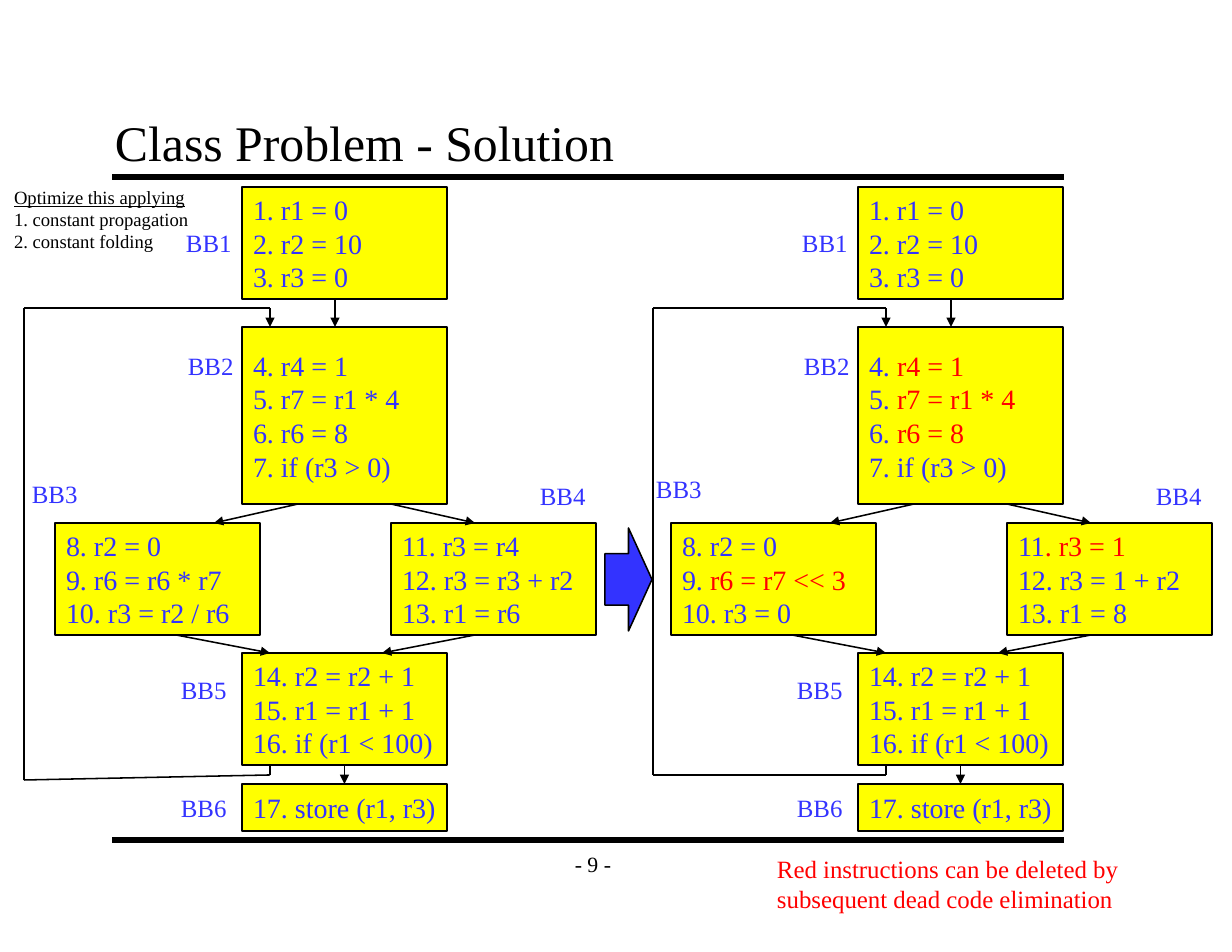
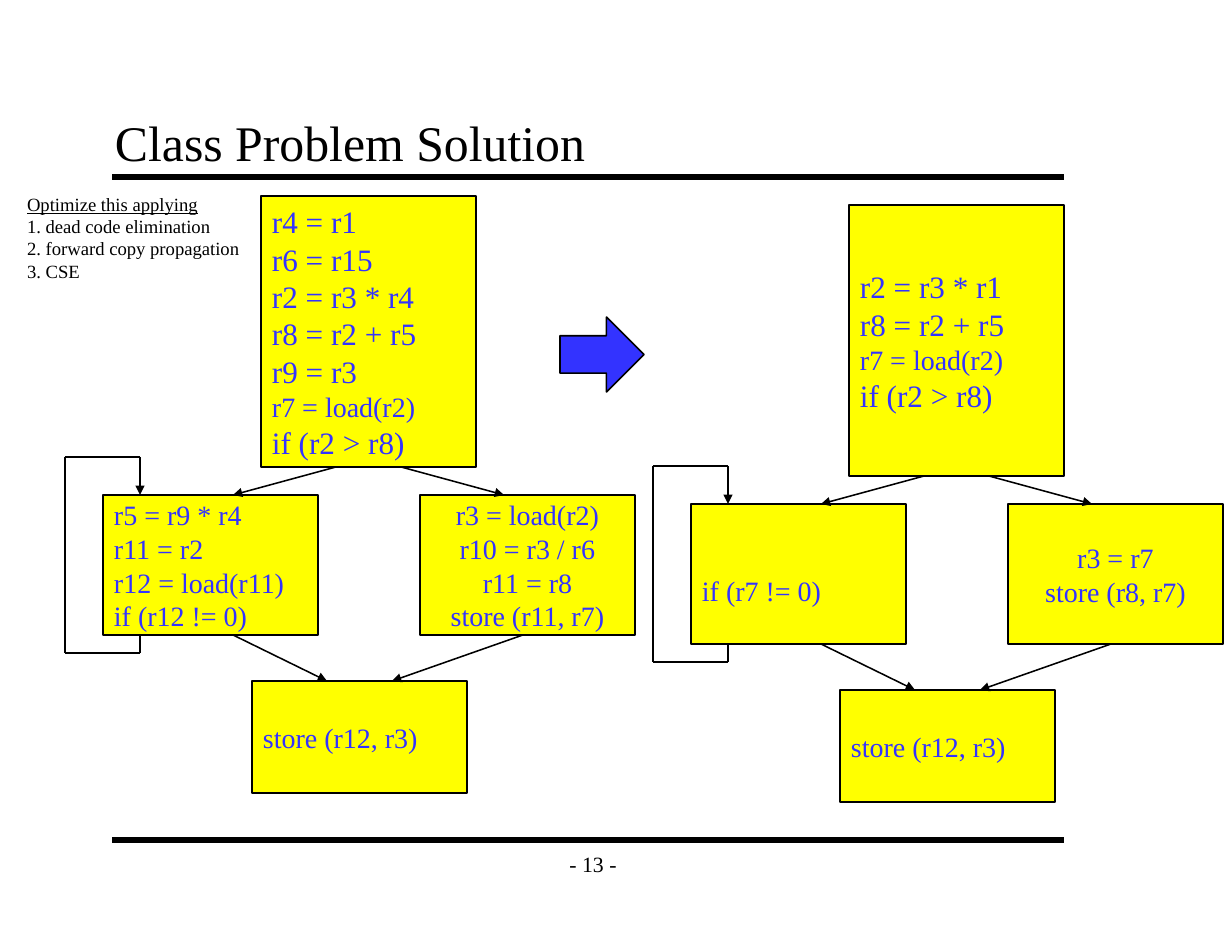
from lxml.etree import SubElement
from pptx import Presentation
from pptx.dml.color import RGBColor
from pptx.enum.shapes import MSO_CONNECTOR, MSO_SHAPE
from pptx.enum.text import MSO_ANCHOR, PP_ALIGN
from pptx.oxml.ns import qn
from pptx.util import Emu, Pt

BLACK = RGBColor(0x00, 0x00, 0x00)
YELLOW = RGBColor(0xFF, 0xFF, 0x00)
BLUE = RGBColor(0x33, 0x33, 0xFF)
RED = RGBColor(0xFF, 0x00, 0x00)
FONT = "Times New Roman"
PX_PER_INCH = 112
BOTTOM, TOP = 2, 0


def px(length):
    return Emu(round(length * 914400 / PX_PER_INCH))


def add_span(para, text, size, color, underline=None):
    span = para.add_run()
    span.text = text
    span.font.name = FONT
    span.font.size = Pt(size)
    span.font.color.rgb = color
    span.font.underline = underline


def write(box, lines, size, color, align=PP_ALIGN.LEFT, small=()):
    """Write one paragraph a line; what follows a | is red, lines in small are 18 pt."""
    frame = box.text_frame
    frame.word_wrap = False
    for index, line in enumerate(lines):
        para = frame.paragraphs[0] if index == 0 else frame.add_paragraph()
        para.alignment = align
        line_size = 18 if line in small else size
        plain, _, red = line.partition("|")
        add_span(para, plain, line_size, color)
        if red:
            add_span(para, red, line_size, RED)


def add_text(page, left, top, width, height, lines, size, color, **style):
    box = page.shapes.add_textbox(px(left), px(top), px(width), px(height))
    write(box, lines, size, color, **style)
    return box


def add_solid(page, kind, left, top, width, height, color):
    shape = page.shapes.add_shape(kind, px(left), px(top), px(width), px(height))
    shape.shadow.inherit = False
    shape.fill.solid()
    shape.fill.fore_color.rgb = color
    shape.line.color.rgb = BLACK
    shape.line.width = Pt(1)
    return shape


def add_code(page, left, top, width, height, lines, size=18, **style):
    box = add_solid(page, MSO_SHAPE.RECTANGLE, left, top, width, height, YELLOW)
    box.text_frame.vertical_anchor = MSO_ANCHOR.MIDDLE
    write(box, lines, size, BLUE, **style)
    return box


def add_line(page, start, end, arrow=False, width=1):
    line = page.shapes.add_connector(
        MSO_CONNECTOR.STRAIGHT, *(px(value) for value in (*start, *end)))
    line.line.color.rgb = BLACK
    line.line.width = Pt(width)
    if arrow:
        SubElement(line.line._get_or_add_ln(), qn("a:tailEnd"),
                   type="triangle", w="med", len="med")
    SubElement(line._element.spPr, qn("a:effectLst"))
    return line


def add_edges(page, left, top, edges):
    for x1, y1, x2, y2 in edges:
        add_line(page, (left + x1, top + y1), (left + x2, top + y2), arrow=True)


def add_loop(page, left, top, corners):
    """Join the corners by lines, with an arrowhead at the last."""
    points = [(left + x, top + y) for x, y in corners]
    for index, (start, end) in enumerate(zip(points, points[1:])):
        add_line(page, start, end, arrow=index == len(points) - 2)


def add_page(deck, title, number):
    page = deck.slides.add_slide(deck.slide_layouts[6])
    for y in (177, 840):
        add_line(page, (112, y), (1064, y), width=4)
    footer = add_text(page, 551, 840, 84, 47, [f"- {number} -"], 14, BLACK,
                      align=PP_ALIGN.CENTER)
    footer.text_frame.vertical_anchor = MSO_ANCHOR.MIDDLE
    heading = add_text(page, 103, 103, 952, 75, [title], 32, BLACK)
    frame = heading.text_frame
    frame.vertical_anchor = MSO_ANCHOR.BOTTOM
    frame.margin_left = frame.margin_right = px(12)
    frame.margin_top = frame.margin_bottom = px(7)
    return page


def add_task(page, left, top, width, steps):
    lines = ["Optimize this applying"]
    lines += [f"{number}. {step}" for number, step in enumerate(steps, 1)]
    box = add_text(page, left, top, width, 13 + 22 * len(lines), lines, 12, BLACK)
    box.text_frame.paragraphs[0].runs[0].font.underline = True


def add_block_graph(page, left, top, codes, bb3_label, loop_x, loop_bottom):
    """Draw the six numbered basic blocks, their edges and the back edge."""
    places = [(187, 0, 112), (187, 140, 177), (0, 336, 112),
              (336, 336, 112), (187, 466, 112), (187, 597, 47)]
    labels = [(120, 35), (122, 158), bb3_label, (474, 288), (115, 482), (115, 600)]
    blocks = []
    for number, ((x, y, height), (label_x, label_y), code) in enumerate(
            zip(places, labels, codes), 1):
        blocks.append(add_code(page, left + x, top + y, 205, height, code))
        add_text(page, left + label_x, top + label_y, 68, 41, [f"BB{number}"], 16, BLUE)
    add_edges(page, left, top, [
        (280, 112, 280, 140), (243, 317, 159, 336), (336, 317, 420, 336),
        (121, 448, 215, 466), (420, 448, 327, 466)])
    last_edge = add_line(page, (left + 289, top + 578), (left + 289, top + 597), arrow=True)
    last_edge.begin_connect(blocks[4], BOTTOM)
    last_edge.end_connect(blocks[5], TOP)
    add_loop(page, left, top, [(215, 578), (215, 588), (loop_x, loop_bottom),
                               (loop_x, 121), (215, 121), (215, 140)])


def add_diamond_graph(page, left, top, entry, looping, side, final):
    """Draw an entry block, a looping and a side branch, and the final block."""
    add_code(page, left + 158, top, 215, 271, entry, size=20, small=("r7 = load(r2)",))
    loop_box = add_code(page, left, top + 299, 215, 140, looping)
    add_code(page, left + 317, top + 299, 215, 140, side, align=PP_ALIGN.CENTER)
    add_code(page, left + 149, top + 485, 215, 112, final)
    add_edges(page, left, top, [
        (233, 271, 130, 299), (298, 271, 401, 299),
        (130, 439, 224, 485), (420, 439, 289, 485)])
    add_loop(page, left, top, [(37, 439), (37, 457), (-38, 457),
                               (-38, 261), (37, 261), (37, 299)])
    return loop_box


def add_folding_page(deck):
    page = add_page(deck, "Class Problem - Solution", 9)
    entry = ["1. r1 = 0", "2. r2 = 10", "3. r3 = 0"]
    latch = ["14. r2 = r2 + 1", "15. r1 = r1 + 1", "16. if (r1 < 100)"]
    final = ["17. store (r1, r3)"]
    before = [entry,
              ["4. r4 = 1", "5. r7 = r1 * 4", "6. r6 = 8", "7. if (r3 > 0)"],
              ["8. r2 = 0", "9. r6 = r6 * r7", "10. r3 = r2 / r6"],
              ["11. r3 = r4", "12. r3 = r3 + r2", "13. r1 = r6"],
              latch, final]
    after = [entry,
             ["4. |r4 = 1", "5. |r7 = r1 * 4", "6. |r6 = 8", "7. if (r3 > 0)"],
             ["8. r2 = 0", "9. |r6 = r7 << 3", "10. r3 = 0"],
             ["11|. r3 = 1", "12. r3 = 1 + r2", "13. r1 = 8"],
             latch, final]
    add_task(page, 3, 180, 199, ["constant propagation", "constant folding"])
    add_block_graph(page, 55, 187, before, (-34, 286), -31, 593)
    add_block_graph(page, 671, 187, after, (-26, 281), -18, 588)
    add_solid(page, MSO_SHAPE.RIGHT_ARROW, 605, 528, 47, 103, BLUE)
    add_text(page, 766, 848, 368, 72, ["Red instructions can be deleted by",
                                       "subsequent dead code elimination"], 16, RED)


def add_copy_page(deck):
    page = add_page(deck, "Class Problem Solution", 13)
    final = ["store (r12, r3)"]
    add_task(page, 16, 187, 237,
             ["dead code elimination", "forward copy propagation", "CSE"])
    add_diamond_graph(
        page, 103, 196,
        ["r4 = r1", "r6 = r15", "r2 = r3 * r4", "r8 = r2 + r5", "r9 = r3",
         "r7 = load(r2)", "if (r2 > r8)"],
        ["r5 = r9 * r4", "r11 = r2", "r12 = load(r11)", "if (r12 != 0)"],
        ["r3 = load(r2)", "r10 = r3 / r6", "r11 = r8", "store (r11, r7)"], final)
    loop_box = add_diamond_graph(
        page, 691, 205,
        ["r2 = r3 * r1", "r8 = r2 + r5", "r7 = load(r2)", "if (r2 > r8)"],
        ["if (r7 != 0)"], ["r3 = r7", "store (r8, r7)"], final)
    loop_box.text_frame.margin_top = px(39)
    add_solid(page, MSO_SHAPE.RIGHT_ARROW, 560, 317, 84, 75, BLUE)


def main():
    deck = Presentation()
    deck.slide_width, deck.slide_height = px(1232), px(952)
    add_folding_page(deck)
    add_copy_page(deck)
    deck.save("out.pptx")


if __name__ == "__main__":
    main()
